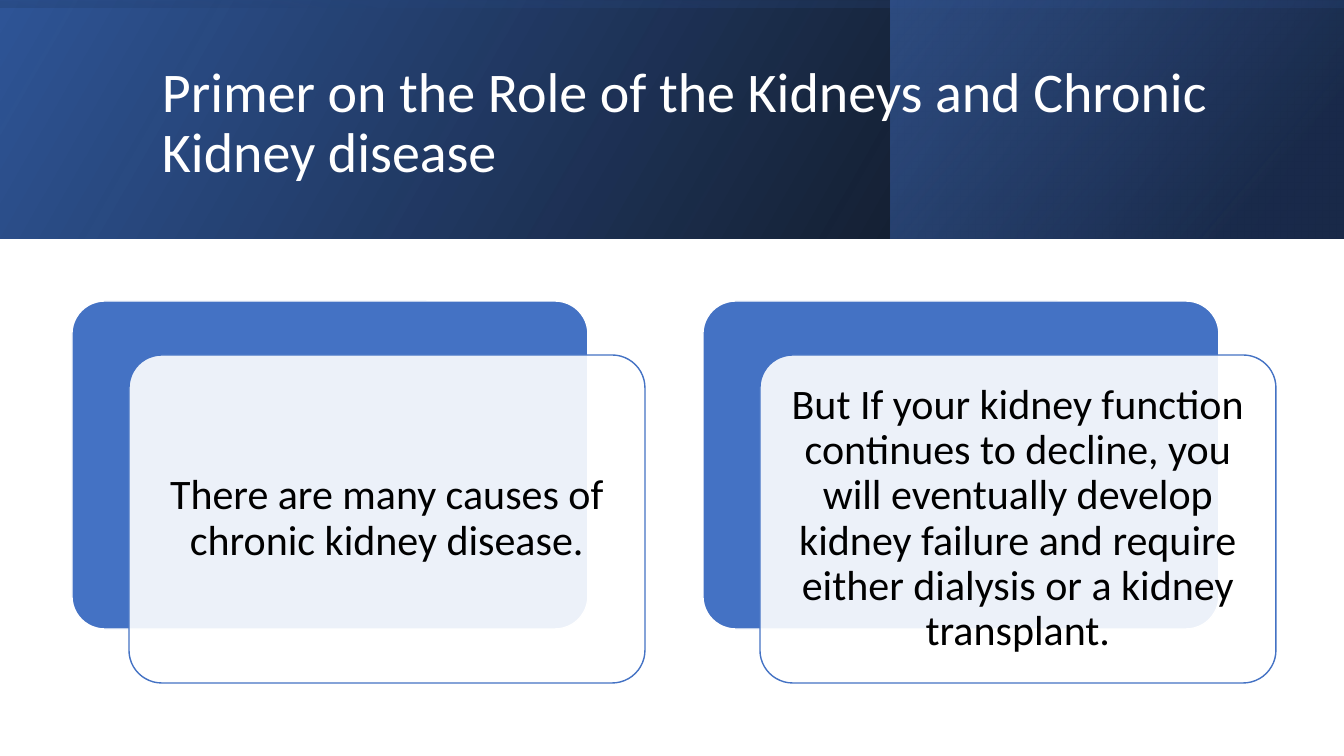
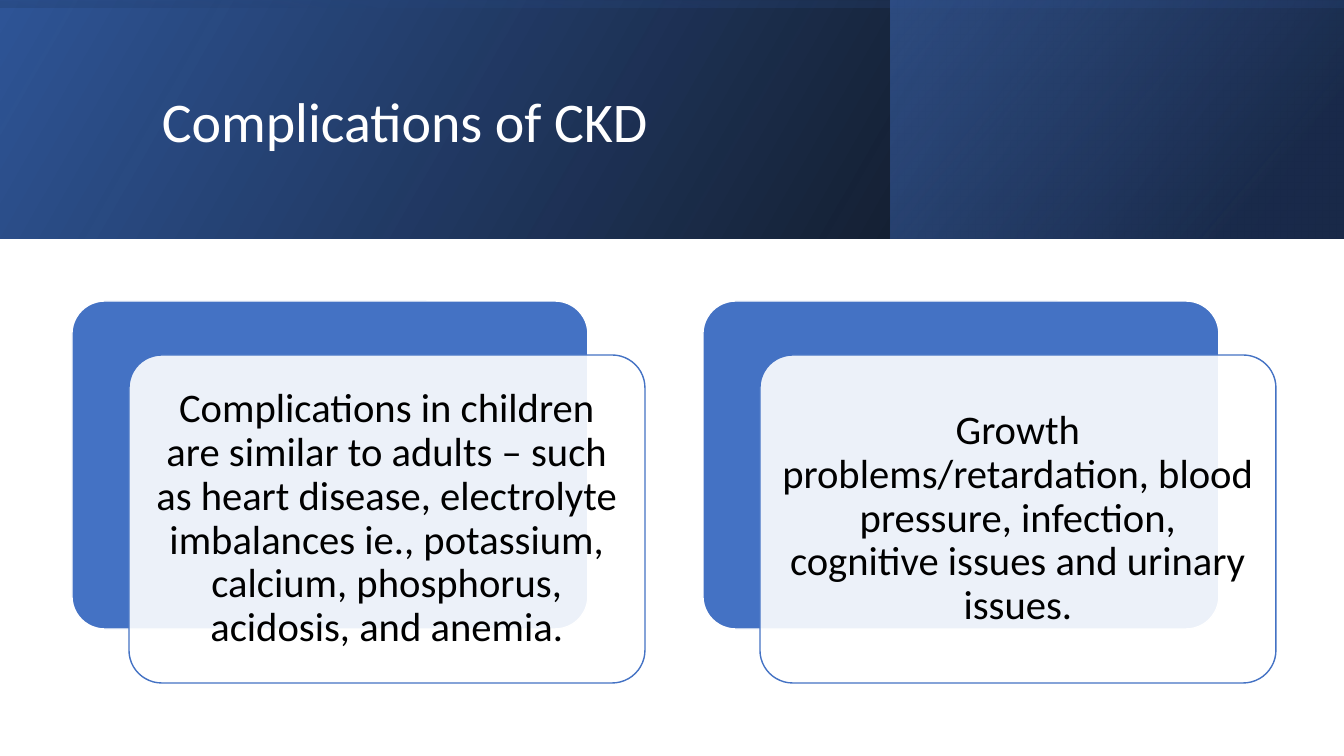
"""Build two kidney disease slides with a shared gradient header and paired cards."""
import lxml.etree
import pptx
import pptx.dml.color
import pptx.enum.shapes
import pptx.enum.text
import pptx.oxml.ns
import pptx.util

PX = 914400 / 100.8
FONT = "Calibri"
WHITE = pptx.dml.color.RGBColor(0xFF, 0xFF, 0xFF)
BLACK = pptx.dml.color.RGBColor(0x00, 0x00, 0x00)
BLUE = pptx.dml.color.RGBColor(0x44, 0x72, 0xC4)
DEEP_BLUE = pptx.dml.color.RGBColor(0x2F, 0x55, 0x97)
NAVY = pptx.dml.color.RGBColor(0x20, 0x38, 0x64)
RECTANGLE = pptx.enum.shapes.MSO_SHAPE.RECTANGLE
ROUNDED = pptx.enum.shapes.MSO_SHAPE.ROUNDED_RECTANGLE
ALIGN = pptx.enum.text.PP_ALIGN

WIDTH, HEIGHT, BAND_HEIGHT = 1344, 756, 239
BAND_SHIFT = (WIDTH - BAND_HEIGHT) // 2
TITLE_BOX = (152, 38, 1072, 173)
CARD_LEFT, CARD_TOP, CARD_WIDTH, CARD_HEIGHT = 72, 301, 516, 328
CARD_STEP, FRONT_RIGHT, FRONT_DOWN, CARD_MARGIN = 631, 57, 54, 12

BANDS = [
    ((0, 0, WIDTH, BAND_HEIGHT), 0, 30,
     [(0, BLACK, 96), (1, DEEP_BLUE, 100)]),
    ((891, 0, 452, BAND_HEIGHT), 0, 40,
     [(0.19, NAVY, 68), (1, BLUE, 48)]),
    ((BAND_SHIFT, -BAND_SHIFT, BAND_HEIGHT, WIDTH), 270, 10,
     [(0.23, DEEP_BLUE, 16), (0.99, BLACK, 45)]),
]
SLIDES = [
    ("Primer on the Role of the Kidneys and Chronic Kidney disease", 30, [
        "There are many causes of chronic kidney disease.",
        "But If your kidney function continues to decline, you will eventually "
        "develop kidney failure and require either dialysis or a kidney transplant.",
    ]),
    ("Complications of CKD", 29, [
        "Complications in children are similar to adults – such as heart disease, "
        "electrolyte imbalances ie., potassium, calcium, phosphorus, acidosis, "
        "and anemia.",
        "Growth problems/retardation, blood pressure, infection, cognitive issues "
        "and urinary issues.",
    ]),
]


def set_opacity(shape, percents):
    colors = shape.element.spPr.iter(pptx.oxml.ns.qn("a:srgbClr"))
    for color, percent in zip(list(colors), percents):
        alpha = lxml.etree.SubElement(color, pptx.oxml.ns.qn("a:alpha"))
        alpha.set("val", str(percent * 1000))


def write_text(shape, text, size, color, align):
    frame = shape.text_frame
    frame.word_wrap = True
    frame.vertical_anchor = pptx.enum.text.MSO_ANCHOR.MIDDLE
    para = frame.paragraphs[0]
    para.text = text
    para.alignment = align
    para.line_spacing = 0.9
    para.font.name = FONT
    para.font.size = pptx.util.Pt(size)
    para.font.color.rgb = color


deck = pptx.Presentation()
deck.slide_width = round(WIDTH * PX)
deck.slide_height = round(HEIGHT * PX)

for title, size, card_texts in SLIDES:
    page = deck.slides.add_slide(deck.slide_layouts[6])

    for place, rotation, angle, stops in BANDS:
        band = page.shapes.add_shape(RECTANGLE, *(round(n * PX) for n in place))
        band.shadow.inherit = False
        band.rotation = rotation
        band.element.spPr.find(pptx.oxml.ns.qn("a:xfrm")).set("flipH", "1")
        band.line.fill.background()
        band.fill.gradient()
        band.fill.gradient_angle = angle
        for stop, (position, color, percent) in zip(band.fill.gradient_stops, stops):
            stop.position = position
            stop.color.rgb = color
        set_opacity(band, [percent for position, color, percent in stops])

    title_box = page.shapes.add_textbox(*(round(n * PX) for n in TITLE_BOX))
    write_text(title_box, title, 40, WHITE, ALIGN.LEFT)

    for index, text in enumerate(card_texts):
        left = CARD_LEFT + index * CARD_STEP
        layers = [
            (left, CARD_TOP, BLUE, WHITE),
            (left + FRONT_RIGHT, CARD_TOP + FRONT_DOWN, WHITE, BLUE),
        ]
        for x, y, fill, line in layers:
            place = (x, y, CARD_WIDTH, CARD_HEIGHT)
            card = page.shapes.add_shape(ROUNDED, *(round(n * PX) for n in place))
            card.shadow.inherit = False
            card.adjustments[0] = 0.1
            card.fill.solid()
            card.fill.fore_color.rgb = fill
            card.line.color.rgb = line
            card.line.width = pptx.util.Pt(1)
        set_opacity(card, [90])
        frame = card.text_frame
        frame.margin_left = frame.margin_right = round(CARD_MARGIN * PX)
        frame.margin_top = frame.margin_bottom = round(CARD_MARGIN * PX)
        write_text(card, text, size, BLACK, ALIGN.CENTER)

deck.save("out.pptx")
